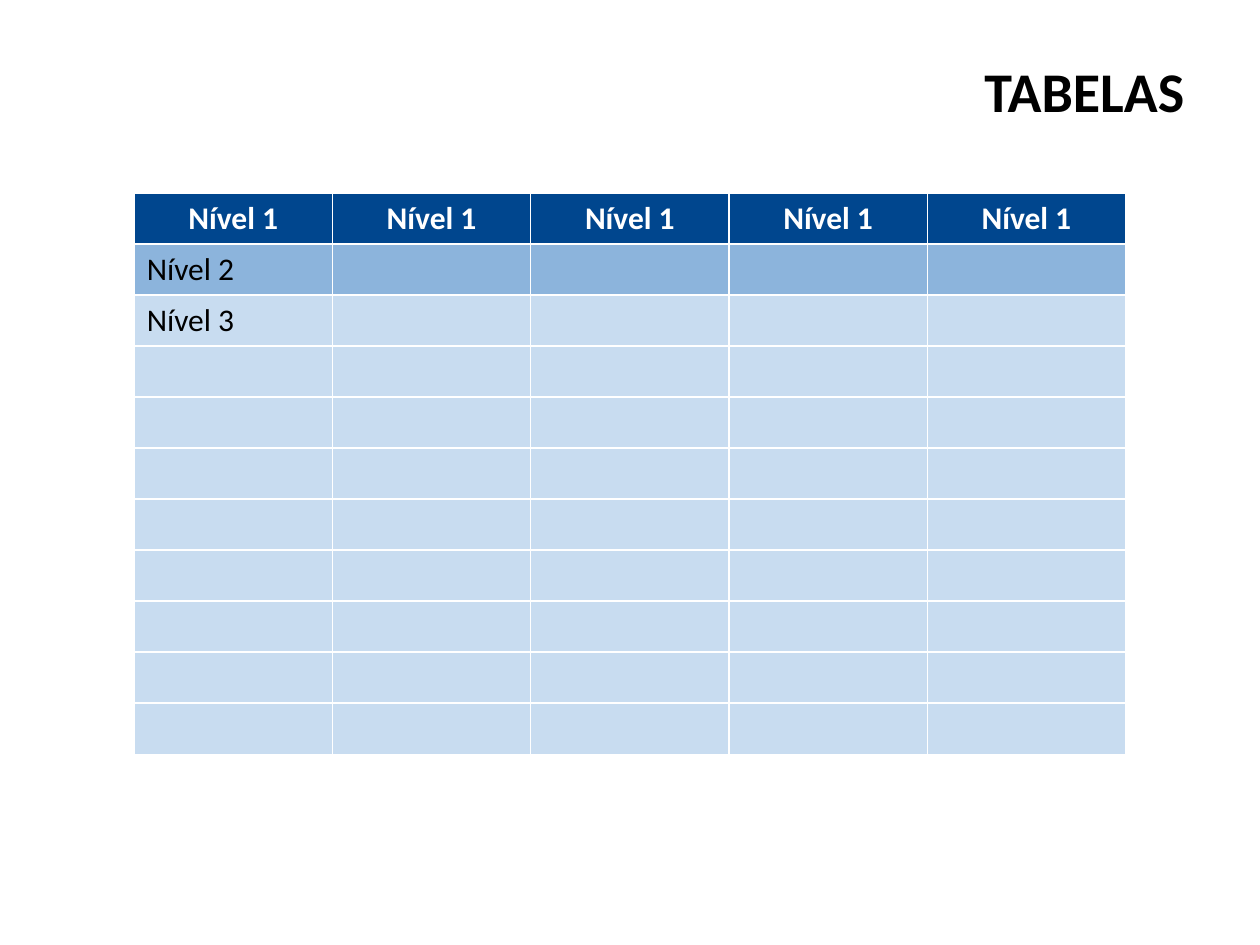
from pptx import Presentation, util as u
from pptx.dml.color import RGBColor
from pptx.enum import text
from pptx.oxml import parse_xml
from pptx.oxml.ns import nsdecls

WHITE = RGBColor(0xFF, 0xFF, 0xFF)
BLACK = RGBColor(0, 0, 0)
NAVY = RGBColor(0x00, 0x46, 0x8E)
BLUE = RGBColor(0x8C, 0xB4, 0xDC)
PALE = RGBColor(0xC8, 0xDC, 0xF0)

WIDE, HIGH = u.Inches(10), u.Inches(7.5)
COLS, ROWS = 5, 11


class Deck:
    """Holds the style and the current slide; boxes are shares of its size."""
    font = "Calibri"

    def __init__(self):
        self.prs = Presentation()
        self.prs.slide_width, self.prs.slide_height = WIDE, HIGH
        self.slide = self.prs.slides.add_slide(self.prs.slide_layouts[6])

    def place(self, x, y, w, h):
        return int(x * WIDE), int(y * HIGH), int(w * WIDE), int(h * HIGH)

    def label(self, frame, words, size, color, bold, align):
        para = frame.paragraphs[0]
        para.alignment = align
        run = para.add_run()
        run.text = words
        font = run.font
        font.name, font.size, font.bold = self.font, u.Pt(size), bold
        font.color.rgb = color

    def title(self, words, *box):
        frame = self.slide.shapes.add_textbox(*self.place(*box)).text_frame
        frame.word_wrap = True
        frame.vertical_anchor = text.MSO_ANCHOR.MIDDLE
        self.label(frame, words, 32, BLACK, True, text.PP_ALIGN.RIGHT)

    def cell(self, cell, fill):
        cell.fill.solid()
        cell.fill.fore_color.rgb = fill
        # Borders come before the fill in the cell's properties
        for i, side in enumerate("LRTB"):
            cell._tc.get_or_add_tcPr().insert(i, parse_xml(
                f'<a:ln{side} {nsdecls("a")} w="{u.Pt(1)}"><a:solidFill>'
                f'<a:srgbClr val="{WHITE}"/></a:solidFill></a:ln{side}>'))

    def table(self, levels, *box):
        x, y, w, h = self.place(*box)
        grid = self.slide.shapes.add_table(ROWS, COLS, x, y, w, h).table
        for col in grid.columns:
            col.width = w // COLS
        for r, row in enumerate(grid.rows):
            row.height = h // ROWS
            # Rows past the last level keep its fill and stay empty
            fill, color, bold, align, _ = levels[min(r, len(levels) - 1)]
            words = levels[r][-1] if r < len(levels) else []
            for c, cell in enumerate(row.cells):
                self.cell(cell, fill)
                if c < len(words):
                    self.label(cell.text_frame, words[c], 18, color, bold, align)


def main():
    deck = Deck()

    # Heading
    deck.title("TABELAS", 0.26, 0.04, 0.69, 0.11)

    # Table, centred across the slide: one style for each level
    mid, left = text.PP_ALIGN.CENTER, text.PP_ALIGN.LEFT
    levels = [
        (NAVY, WHITE, True, mid, ["Nível 1"] * COLS),
        (BLUE, BLACK, False, left, ["Nível 2"]),
        (PALE, BLACK, False, left, ["Nível 3"]),
    ]
    wide = 7.87 / 10
    deck.table(levels, (1 - wide) / 2, 1.53 / 7.5, wide, 4.46 / 7.5)

    deck.prs.save("out.pptx")


if __name__ == "__main__":
    main()
